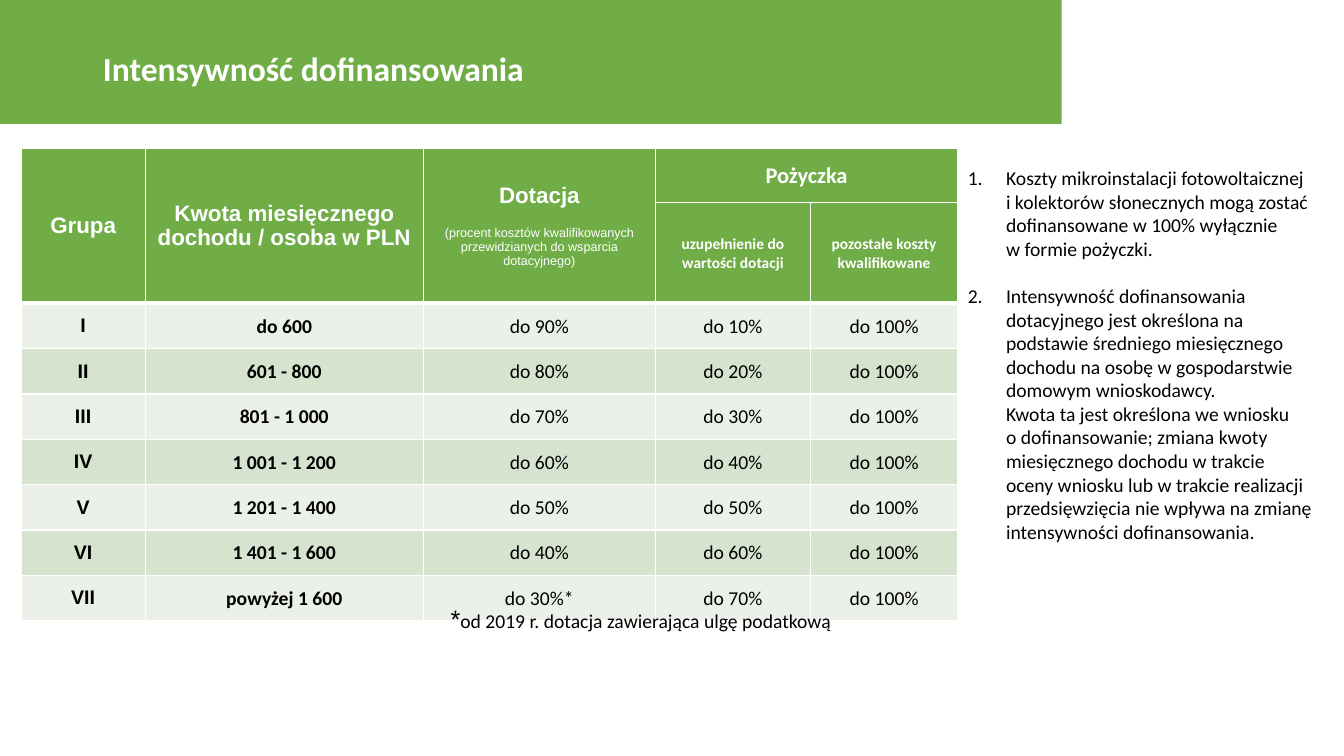
from lxml.etree import SubElement
from pptx import Presentation
from pptx.dml.color import RGBColor
from pptx.enum.shapes import MSO_SHAPE as Shape
from pptx.enum.text import MSO_ANCHOR as Anchor, PP_ALIGN as Align
from pptx.oxml.ns import qn
from pptx.util import Inches, Pt

# Content
TITLE = "Intensywność dofinansowania"
MAIN_HEADS = ["Grupa", "Kwota miesięcznego dochodu / osoba w PLN", "Dotacja", "Pożyczka"]
GRANT_NOTE = "(procent kosztów kwalifikowanych przewidzianych do wsparcia dotacyjnego)"
LOAN_HEADS = ["uzupełnienie do wartości dotacji", "pozostałe koszty kwalifikowane"]
GROUPS = [
    ("I", "do 600", "do 90%", "do 10%", "do 100%"),
    ("II", "601 - 800", "do 80%", "do 20%", "do 100%"),
    ("III", "801 - 1 000", "do 70%", "do 30%", "do 100%"),
    ("IV", "1 001 - 1 200", "do 60%", "do 40%", "do 100%"),
    ("V", "1 201 - 1 400", "do 50%", "do 50%", "do 100%"),
    ("VI", "1 401 - 1 600", "do 40%", "do 60%", "do 100%"),
    ("VII", "powyżej 1 600", "do 30%*", "do 70%", "do 100%"),
]
NOTES = [
    "Koszty mikroinstalacji fotowoltaicznej\vi kolektorów słonecznych mogą zostać "
    "dofinansowane w 100% wyłącznie\vw formie pożyczki.",
    "Intensywność dofinansowania dotacyjnego jest określona na podstawie średniego "
    "miesięcznego dochodu na osobę w gospodarstwie domowym wnioskodawcy.\v"
    "Kwota ta jest określona we wniosku\vo dofinansowanie; zmiana kwoty miesięcznego "
    "dochodu w trakcie oceny wniosku lub w trakcie realizacji przedsięwzięcia nie wpływa "
    "na zmianę intensywności dofinansowania.",
]
FOOTNOTE = "od 2019 r. dotacja zawierająca ulgę podatkową"

GREEN, PALE, LIGHT, WHITE, BLACK = "70AD47", "EBF1E9", "D5E3CF", "FFFFFF", "000000"
COLUMN_WIDTHS = [1.23, 2.76, 2.3, 1.54, 1.46]
ROW_HEIGHTS = [0.54, 0.7] + [0.45] * len(GROUPS)
HEAD_ROWS = 2


def paint(colour_format, colour):
    colour_format.rgb = RGBColor.from_string(colour)


def fill_with(part, colour):
    part.fill.solid()
    paint(part.fill.fore_color, colour)


def set_font(font, name, size, colour, bold=False):
    font.name, font.size, font.bold = name, Pt(size), bold
    paint(font.color, colour)


def set_borders(cell, top, bottom):
    properties = cell._tc.get_or_add_tcPr()
    for side, points in (("L", 1), ("R", 1), ("T", top), ("B", bottom)):
        line = SubElement(properties, qn(f"a:ln{side}"), w=str(Pt(points)))
        SubElement(SubElement(line, qn("a:solidFill")), qn("a:srgbClr"), val=WHITE)


def write_cell(cell, text, name, size, colour, bold, tight):
    cell.text = text
    cell.vertical_anchor = Anchor.MIDDLE
    if tight:
        cell.margin_left = cell.margin_right = cell.margin_top = Inches(0.01)
        cell.margin_bottom = 0
    paragraph = cell.text_frame.paragraphs[0]
    paragraph.alignment = Align.CENTER
    set_font(paragraph.font, name, size, colour, bold)


prs = Presentation()
prs.slide_width, prs.slide_height = Inches(13.33), Inches(7.5)
slide = prs.slides.add_slide(prs.slide_layouts[5])
shapes = slide.shapes

# Green band, placed behind the title
band = shapes.add_shape(Shape.RECTANGLE, 0, 0, Inches(10.53), Inches(1.23))
band.shadow.inherit = False
fill_with(band, GREEN)
band.line.fill.background()
shapes._spTree.insert(2, band._element)

# Title
title = shapes.title
title.left, title.top, title.width, title.height = map(Inches, (0.92, 0.21, 9.53, 0.94))
title.text_frame.text = TITLE
title.text_frame.vertical_anchor = Anchor.MIDDLE
title.text_frame.paragraphs[0].alignment = Align.LEFT
set_font(title.text_frame.paragraphs[0].font, "Calibri", 24, WHITE, True)

# Numbered notes
notes = shapes.add_textbox(Inches(9.5), Inches(1.6), Inches(3.62), Inches(4.11)).text_frame
notes.word_wrap = True
for number, note in enumerate(NOTES):
    paragraph = notes.add_paragraph() if number else notes.paragraphs[0]
    paragraph.text = note
    if number:
        paragraph.space_before = Pt(17)
    properties = paragraph._p.get_or_add_pPr()
    properties.set("marL", str(Inches(0.38)))
    properties.set("indent", str(-Inches(0.38)))
    SubElement(properties, qn("a:buFont"), typeface="+mj-lt")
    SubElement(properties, qn("a:buAutoNum"), type="arabicPeriod")
    set_font(paragraph.font, "Calibri", 14, BLACK)

# Table grid: borders and row colours
table = shapes.add_table(len(ROW_HEIGHTS), len(COLUMN_WIDTHS), Inches(0.21), Inches(1.47),
                         Inches(sum(COLUMN_WIDTHS)), Inches(sum(ROW_HEIGHTS))).table
for column, width in zip(table.columns, COLUMN_WIDTHS):
    column.width = Inches(width)
for r, height in enumerate(ROW_HEIGHTS):
    table.rows[r].height = Inches(height)
    for c in range(len(COLUMN_WIDTHS)):
        cell = table.cell(r, c)
        set_borders(cell, 3 if r == HEAD_ROWS else 1, 3 if r == HEAD_ROWS - 1 else 1)
        fill_with(cell, GREEN if r < HEAD_ROWS else (PALE, LIGHT)[r % 2])

# Table headings
for c, head in enumerate(MAIN_HEADS):
    is_loan = head == "Pożyczka"
    cell = table.cell(0, c)
    cell.merge(table.cell(0, c + 1) if is_loan else table.cell(1, c))
    write_cell(cell, head, "Calibri" if is_loan else "Arial", 16, WHITE, True, is_loan)
grant_note = table.cell(0, 2).text_frame.add_paragraph()
grant_note.text = GRANT_NOTE
grant_note.alignment = Align.CENTER
grant_note.space_before = Pt(13)
set_font(grant_note.font, "Arial", 9, WHITE)
for c, head in enumerate(LOAN_HEADS, start=3):
    write_cell(table.cell(1, c), head, "Calibri", 11, WHITE, True, True)

# Table body
for r, group in enumerate(GROUPS, start=HEAD_ROWS):
    for c, value in enumerate(group):
        write_cell(table.cell(r, c), value, "Calibri" if c else "Arial", 14, BLACK, c < 2, c > 0)

# Footnote
footnote = shapes.add_textbox(Inches(4.37), Inches(5.94), Inches(4.2), Inches(0.4)).text_frame
footnote.word_wrap = True
for text, name, size in (("*", "Arial", 18), (FOOTNOTE, "Calibri", 14)):
    run = footnote.paragraphs[0].add_run()
    run.text = text
    set_font(run.font, name, size, BLACK)

prs.save("out.pptx")
